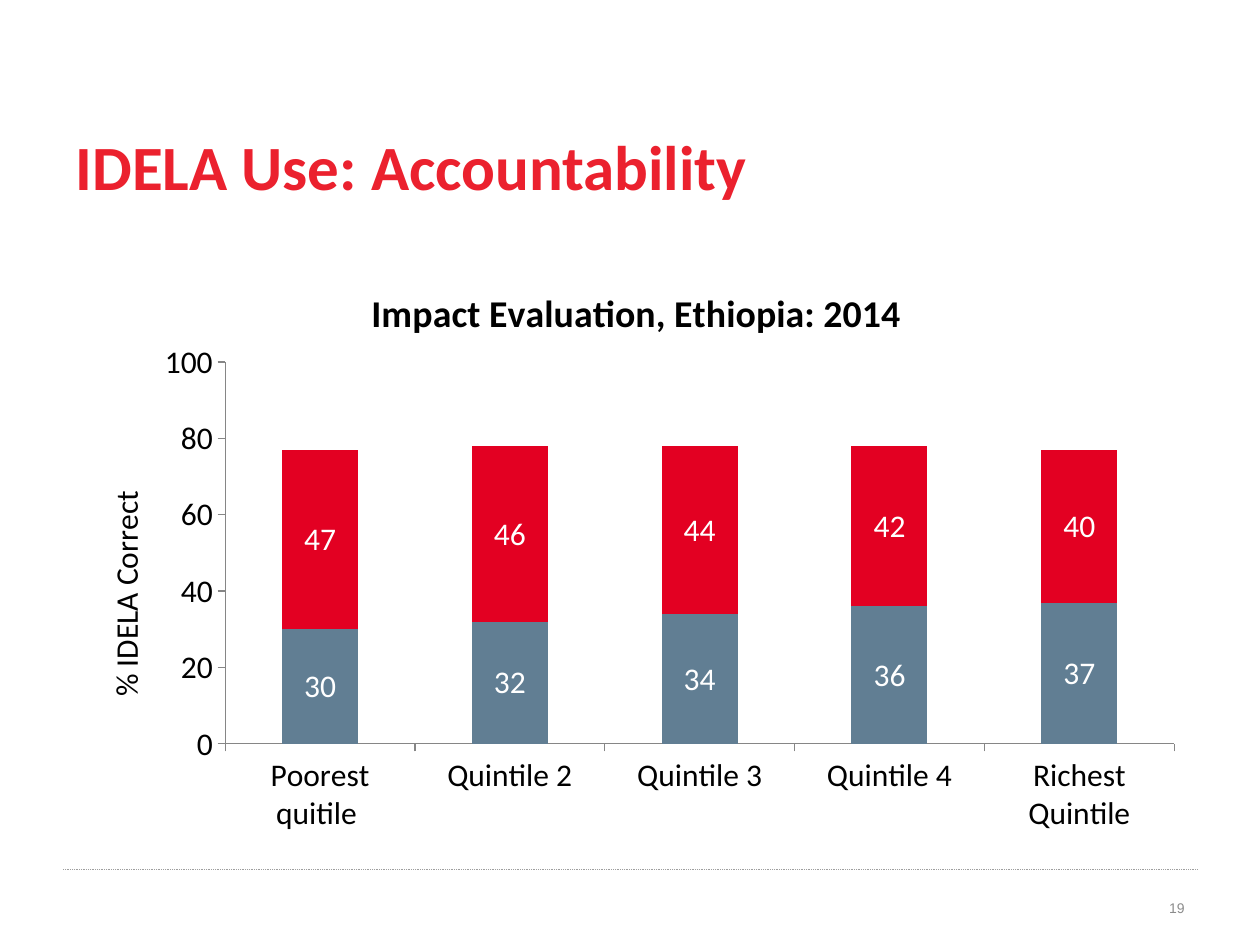
"""Build the IDELA accountability slide with its stacked column chart."""
from lxml import etree
from pptx import Presentation
from pptx.chart.data import CategoryChartData
from pptx.dml.color import RGBColor
from pptx.enum.chart import XL_CHART_TYPE as ChartType, XL_LABEL_POSITION as LabelPosition
from pptx.enum.chart import XL_TICK_MARK as TickMark
from pptx.enum.dml import MSO_LINE_DASH_STYLE as Dash
from pptx.enum.shapes import MSO_CONNECTOR as Connector
from pptx.enum.text import MSO_ANCHOR as Anchor, PP_ALIGN as Align
from pptx.oxml.ns import qn
from pptx.util import Pt

PX = 914400 / 126
WIDTH, HEIGHT = 1260, 945
LEFT, RIGHT = 63, 1197
CHART_TOP, CHART_WIDTH, CHART_HEIGHT = 252, 1134, 592

BLACK = RGBColor(0x00, 0x00, 0x00)
WHITE = RGBColor(0xFF, 0xFF, 0xFF)
TITLE_RED = RGBColor(0xEB, 0x21, 0x2E)
BAR_RED = RGBColor(0xE3, 0x00, 0x22)
BAR_SLATE = RGBColor(0x61, 0x7E, 0x93)
RULE_GRAY = RGBColor(0x9E, 0x9E, 0x9E)
NUMBER_GRAY = RGBColor(0x8C, 0x8C, 0x8C)
AXIS_GRAY = RGBColor(0x86, 0x86, 0x86)


def write(frame, text, size, color=BLACK, font="Calibri", bold=False, align=None, spacing=None):
    paragraph = frame.paragraphs[0]
    paragraph.alignment = align
    paragraph.line_spacing = spacing
    run = paragraph.add_run()
    run.text = text
    run.font.name = font
    run.font.size = Pt(size)
    run.font.bold = bold
    run.font.color.rgb = color


def place(parent, index, left, top, **extent):
    for old in parent.findall(qn("c:layout")):
        parent.remove(old)
    layout = etree.Element(qn("c:layout"))
    manual = etree.SubElement(layout, qn("c:manualLayout"))
    values = {"xMode": "edge", "yMode": "edge",
              "x": round((left - LEFT) / CHART_WIDTH, 3),
              "y": round((top - CHART_TOP) / CHART_HEIGHT, 3)}
    if extent:
        values = {"layoutTarget": "inner", **values,
                  "w": round(extent["width"] / CHART_WIDTH, 3),
                  "h": round(extent["height"] / CHART_HEIGHT, 3)}
    for name, value in values.items():
        etree.SubElement(manual, qn(f"c:{name}")).set("val", str(value))
    parent.insert(index, layout)


presentation = Presentation()
presentation.slide_width = round(WIDTH * PX)
presentation.slide_height = round(HEIGHT * PX)
slide = presentation.slides.add_slide(presentation.slide_layouts[5])

rule = slide.shapes.add_connector(
    Connector.STRAIGHT, *(round(n * PX) for n in (LEFT, 869, RIGHT, 869)))
rule.line.color.rgb = RULE_GRAY
rule.line.width = Pt(0.5)
rule.line.dash_style = Dash.ROUND_DOT
etree.SubElement(rule._element.spPr, qn("a:effectLst"))

title = slide.shapes.title
title.left, title.top, title.width, title.height = (
    round(n * PX) for n in (LEFT, 113, CHART_WIDTH, 118))
title.text_frame.vertical_anchor = Anchor.MIDDLE
write(title.text_frame, "IDELA Use: Accountability", 36, TITLE_RED,
      bold=True, align=Align.LEFT, spacing=0.8)

number = slide.shapes.add_textbox(*(round(n * PX) for n in (903, 895, 294, 25)))
number.text_frame.word_wrap = True
number.text_frame.vertical_anchor = Anchor.MIDDLE
write(number.text_frame, "19", 8, NUMBER_GRAY, font="Arial", align=Align.RIGHT)

data = CategoryChartData(number_format="General")
data.categories = ["Poorest quitile ", "Quintile 2", "Quintile 3", "Quintile 4", "Richest Quintile"]
data.add_series("Series 1", [30, 32, 34, 36, 37])
data.add_series("Series 2", [47, 46, 44, 42, 40])
chart = slide.shapes.add_chart(
    ChartType.COLUMN_STACKED,
    *(round(n * PX) for n in (LEFT, CHART_TOP, CHART_WIDTH, CHART_HEIGHT)), data).chart
chart.font.name = "Calibri"
chart.font.size = Pt(18)
chart.font.color.rgb = BLACK
chart.has_legend = False
chart.has_title = True
write(chart.chart_title.text_frame, "Impact Evaluation, Ethiopia: 2014", 21.6, bold=True)
place(chart.chart_title._element, 1, 365, 279)

value_axis = chart.value_axis
value_axis.minimum_scale = 0
value_axis.maximum_scale = 100
value_axis.major_unit = 20
value_axis.has_major_gridlines = False
value_axis.has_title = True
write(value_axis.axis_title.text_frame, "% IDELA Correct", 18)
place(value_axis.axis_title._element, 1, 98, 485)
for axis in (chart.category_axis, value_axis):
    axis.major_tick_mark = TickMark.OUTSIDE
    axis.minor_tick_mark = TickMark.NONE
    axis.format.line.color.rgb = AXIS_GRAY
    axis.format.line.width = Pt(0.75)

plot = chart.plots[0]
plot.gap_width = 150
plot.overlap = 100
plot.vary_by_categories = False
for series, color in zip(plot.series, (BAR_SLATE, BAR_RED)):
    series.format.fill.solid()
    series.format.fill.fore_color.rgb = color
    labels = series.data_labels
    labels.show_value = True
    labels.position = LabelPosition.CENTER
    labels.font.name = "Calibri"
    labels.font.size = Pt(18)
    labels.font.color.rgb = WHITE
place(chart._chartSpace.chart.plotArea, 0, 225, 362, width=949, height=382)

presentation.save("out.pptx")
